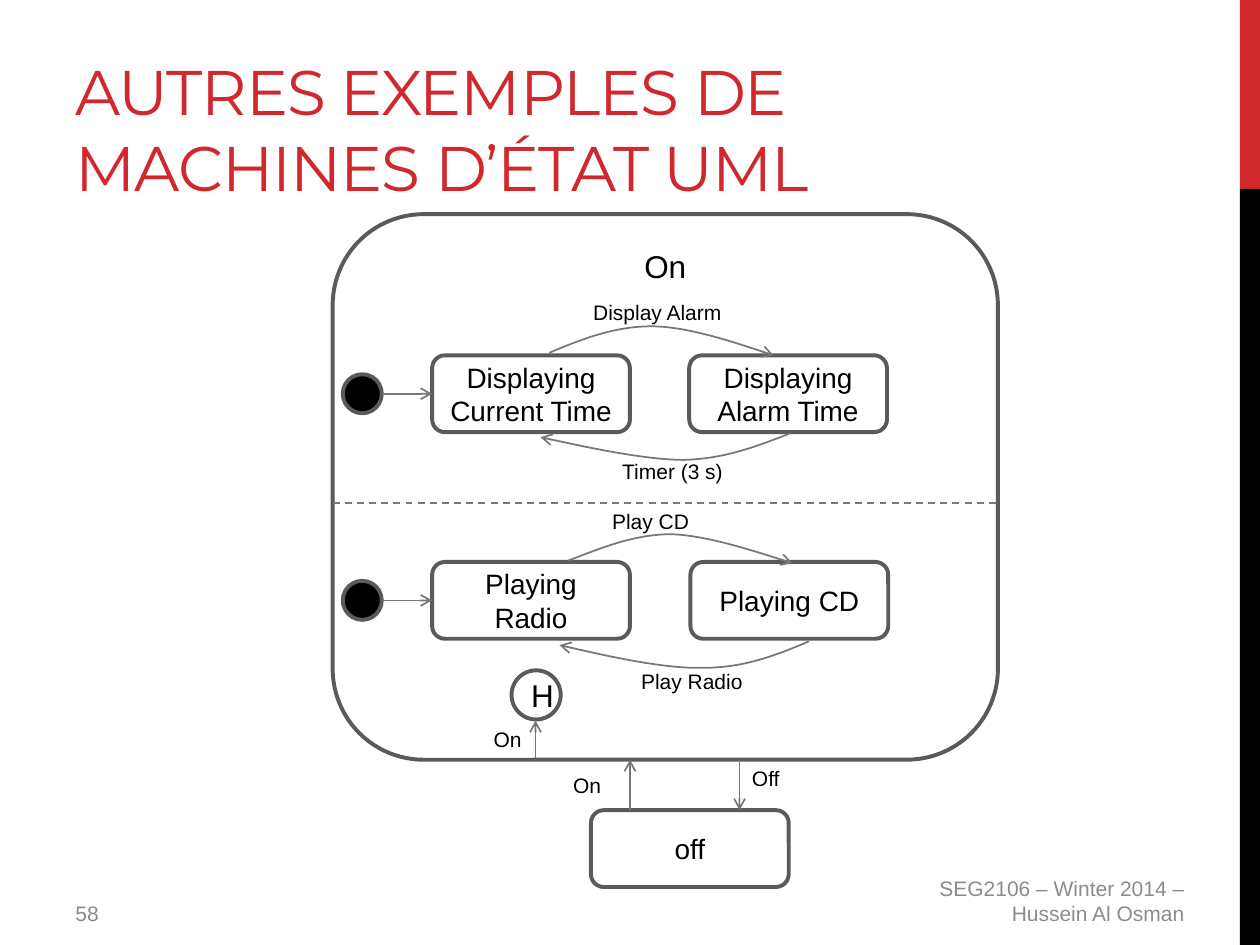
from pptx import Presentation
from pptx.dml.color import RGBColor
from pptx.enum.dml import MSO_LINE
from pptx.enum.shapes import MSO_CONNECTOR, MSO_SHAPE
from pptx.enum.text import MSO_ANCHOR, MSO_AUTO_SIZE, PP_ALIGN
from pptx.oxml.ns import qn
from pptx.util import Inches, Pt
from lxml import etree

RECT, ROUNDED, OVAL = MSO_SHAPE.RECTANGLE, MSO_SHAPE.ROUNDED_RECTANGLE, MSO_SHAPE.OVAL
STRAIGHT = MSO_CONNECTOR.STRAIGHT
TOP, MIDDLE, BOTTOM = MSO_ANCHOR.TOP, MSO_ANCHOR.MIDDLE, MSO_ANCHOR.BOTTOM
LEFT, CENTER, RIGHT = PP_ALIGN.LEFT, PP_ALIGN.CENTER, PP_ALIGN.RIGHT
NO_FIT, GROW = MSO_AUTO_SIZE.NONE, MSO_AUTO_SIZE.SHAPE_TO_FIT_TEXT
DASH = MSO_LINE.DASH

COLORS = {
    "red": "D1282E", "black": "000000", "outline": "5A5A5A",
    "arrow": "777777", "footer": "8C8C8C", "number": "898989",
}
LEFT_SIDE = 1
STATE_WIDTH, STATE_HEIGHT = 1.57, 0.61


def color(name):
    return RGBColor.from_string(COLORS[name])


def box(left, top, width, height):
    return [Inches(value) for value in (left, top, width, height)]


class StateDiagram:
    """Holds the slide and the look of its states and transitions."""

    def __init__(self, slide):
        self.slide = slide
        self.shapes = slide.shapes
        self.font = "Arial"
        self.title_font = "Montserrat"
        self.state_line = Pt(2.25)
        self.arrow_line = Pt(1)

    def add_text(self, frame, text, size, ink="black", align=LEFT, anchor=TOP, font=None):
        frame.word_wrap = True
        frame.vertical_anchor = anchor
        paragraph = frame.paragraphs[0]
        paragraph.alignment = align
        run = paragraph.add_run()
        run.text = text
        run.font.size = Pt(size)
        run.font.name = font or self.font
        run.font.color.rgb = color(ink)
        return run

    def title(self, text, place):
        title = self.shapes.title
        title.left, title.top, title.width, title.height = box(*place)
        title.text_frame.auto_size = NO_FIT
        run = self.add_text(title.text_frame, text, 36, "red", LEFT, BOTTOM, self.title_font)
        run.font._element.set("spc", "-60")

    def label(self, text, place, ink="black", align=LEFT, anchor=TOP, fit=GROW):
        textbox = self.shapes.add_textbox(*box(*place))
        self.add_text(textbox.text_frame, text, 12, ink, align, anchor)
        textbox.text_frame.auto_size = fit

    def band(self, place, fill):
        band = self.shapes.add_shape(RECT, *box(*place))
        band.shadow.inherit = False
        band.fill.solid()
        band.fill.fore_color.rgb = color(fill)
        band.line.fill.background()

    def node(self, kind, place, text="", size=16, anchor=MIDDLE, fill=None):
        node = self.shapes.add_shape(kind, *box(*place))
        node.shadow.inherit = False
        if fill:
            node.fill.solid()
            node.fill.fore_color.rgb = color(fill)
        else:
            node.fill.background()
        node.line.color.rgb = color("outline")
        node.line.width = self.state_line
        if text:
            self.add_text(node.text_frame, text, size, "black", CENTER, anchor)
        return node

    def state(self, text, left, top):
        return self.node(ROUNDED, (left, top, STATE_WIDTH, STATE_HEIGHT), text)

    def style_line(self, line, arrow=True):
        line.color.rgb = color("arrow")
        line.width = self.arrow_line
        if arrow:
            etree.SubElement(line._get_or_add_ln(), qn("a:tailEnd"), type="arrow")

    def straight(self, start, end, target=None, dashed=False):
        line = self.shapes.add_connector(STRAIGHT, *box(*start, *end))
        if target is not None:
            line.end_connect(target, LEFT_SIDE)
        if dashed:
            line.line.dash_style = DASH
        self.style_line(line.line, arrow=not dashed)
        etree.SubElement(line._element.spPr, qn("a:effectLst"))

    def curve(self, start, *points):
        """Draw an arrow along Bézier segments, three points to a segment."""
        builder = self.shapes.build_freeform(*[Inches(value) for value in start])
        builder.add_line_segments(
            [(Inches(x), Inches(y)) for x, y in points], close=False)
        curve = builder.convert_to_shape()
        outline = curve._element.find(".//" + qn("a:path"))
        steps = outline.findall(qn("a:lnTo"))
        for first in range(0, len(steps), 3):
            segment = etree.SubElement(outline, qn("a:cubicBezTo"))
            for step in steps[first:first + 3]:
                segment.append(step[0])
                outline.remove(step)
        curve.shadow.inherit = False
        curve.fill.background()
        self.style_line(curve.line)


def main():
    presentation = Presentation()
    presentation.slide_width, presentation.slide_height = Inches(10), Inches(7.5)
    diagram = StateDiagram(presentation.slides.add_slide(presentation.slide_layouts[5]))

    diagram.band((9.84, 0, 0.16, 1.5), "red")
    diagram.band((9.84, 1.5, 0.16, 6), "black")
    diagram.title("AUTRES EXEMPLES DE MACHINES D’ÉTAT UML", (0.5, 0.17, 7.58, 1.5))
    diagram.label("SEG2106 – Winter 2014 – Hussein Al Osman", (7.17, 6.95, 2.33, 0.4),
                  "footer", RIGHT, MIDDLE, NO_FIT)
    diagram.label("58", (0.5, 7.1, 3.75, 0.31), "number", fit=NO_FIT)

    diagram.node(ROUNDED, (2.64, 1.7, 5.28, 4.33), "On", 18, TOP)
    diagram.straight((2.64, 3.99), (7.91, 3.99), dashed=True)

    regions = [
        ("Displaying Current Time", "Displaying Alarm Time", 5.47, 2.82, 2.97),
        ("Playing Radio", "Playing CD", 5.48, 4.46, 4.61),
    ]
    for initial, other, other_left, top, dot_top in regions:
        initial_state = diagram.state(initial, 3.43, top)
        diagram.state(other, other_left, top)
        diagram.node(OVAL, (2.72, dot_top, 0.31, 0.31), fill="black")
        center = top + STATE_HEIGHT / 2
        diagram.straight((3.03, center), (3.43, center), initial_state)

    diagram.curve((4.36, 2.8), (4.62, 2.69), (4.88, 2.59), (5.17, 2.59),
                  (5.47, 2.59), (6.14, 2.82), (6.14, 2.82))
    diagram.curve((6.27, 3.44), (6.01, 3.54), (5.76, 3.64), (5.43, 3.65),
                  (5.1, 3.65), (4.29, 3.47), (4.29, 3.47))
    diagram.curve((4.51, 4.45), (4.77, 4.35), (5.03, 4.24), (5.33, 4.24),
                  (5.62, 4.25), (6.29, 4.47), (6.29, 4.47))
    diagram.curve((6.42, 5.09), (6.16, 5.2), (5.91, 5.3), (5.58, 5.3),
                  (5.25, 5.31), (4.44, 5.12), (4.44, 5.12))

    diagram.state("off", 4.69, 6.43)
    diagram.node(OVAL, (4.06, 5.32, 0.39, 0.39), "H", 18)
    diagram.straight((5.87, 6.03), (5.87, 6.43))
    diagram.straight((5, 6.43), (5, 6.03))
    diagram.straight((4.25, 6.02), (4.25, 5.72))

    transitions = [
        ("Display Alarm", 4.61, 2.33, 1.26),
        ("Timer (3 s)", 4.84, 3.59, 1.26),
        ("Play CD", 4.76, 3.99, 1.26),
        ("Play Radio", 4.99, 5.26, 1.26),
        ("Off", 5.87, 6.03, 0.63),
        ("On", 4.45, 6.08, 0.63),
        ("On", 3.82, 5.72, 0.63),
    ]
    for event, left, top, width in transitions:
        diagram.label(event, (left, top, width, 0.3))

    presentation.save("out.pptx")


if __name__ == "__main__":
    main()
